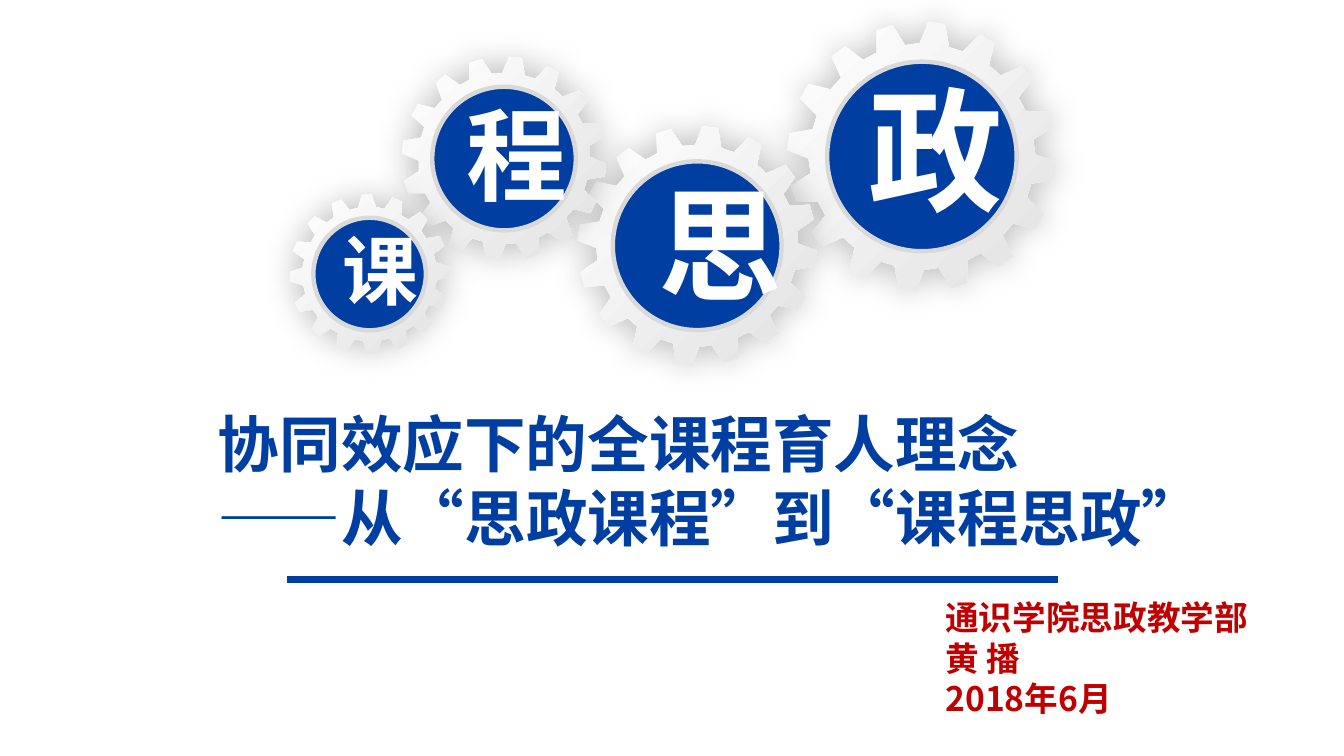
import math
from dataclasses import dataclass

import pptx
import pptx.dml.color
import pptx.enum.dml
import pptx.enum.shapes
import pptx.enum.text
import pptx.oxml
import pptx.oxml.ns
import pptx.util

PX = 9525
TEETH = 16


@dataclass(frozen=True)
class Theme:
    """Colours, fonts and type sizes of the deck."""
    blue: str = "003FA1"
    red: str = "C00000"
    white: str = "FFFFFF"
    silver: str = "E2E2E2"
    rim: str = "D9D9D9"
    edge: str = "A6A6A6"
    latin: str = "Arial"
    cjk: str = "Noto Sans CJK SC"
    title: int = 44
    author: int = 24


THEME = Theme()
ALIGN = pptx.enum.text.PP_ALIGN


def px(n):
    """Turn px into EMU."""
    return pptx.util.Emu(round(n * PX))


def rgb(value):
    """Turn a hex string into a colour."""
    return pptx.dml.color.RGBColor.from_string(value)


def place(sp, box):
    """Move a shape to a left, top, width, height box in px."""
    for name, n in zip(("left", "top", "width", "height"), box):
        setattr(sp, name, px(n))


def write(sp, lines, font, size, color, align):
    """Fill a shape with bold lines of text, one paragraph each."""
    tf = sp.text_frame
    frame = {"word_wrap": True, "vertical_anchor": pptx.enum.text.MSO_ANCHOR.TOP,
             "auto_size": pptx.enum.text.MSO_AUTO_SIZE.NONE}
    for name, value in frame.items():
        setattr(tf, name, value)
    for i, line in enumerate(lines):
        p = tf.paragraphs[0] if i == 0 else tf.add_paragraph()
        layout = {"alignment": align, "line_spacing": 1.0,
                  "space_before": pptx.util.Pt(0)}
        for name, value in layout.items():
            setattr(p, name, value)
        r = p.add_run()
        r.text = line
        for name, value in {"name": font, "size": pptx.util.Pt(size), "bold": True}.items():
            setattr(r.font, name, value)
        r.font.color.rgb = rgb(color)
        ea = pptx.oxml.parse_xml(
            f'<a:ea {pptx.oxml.ns.nsdecls("a")} typeface="{THEME.cjk}"/>')
        r.font._element.find(pptx.oxml.ns.qn("a:latin")).addnext(ea)


def add_text(shapes, box, *style):
    """Add a text box with styled lines."""
    write(shapes.add_textbox(*map(px, box)), *style)


def add_wheel(shapes, cx, cy, radius, phase):
    """Draw a toothed wheel with a silver gradient and a soft shadow."""
    corners = ((-7.5, 0.84), (-3.65, 1), (3.65, 1), (7.5, 0.84))
    points = []
    for tooth in range(TEETH):
        for turn, reach in corners:
            angle = math.radians(phase + tooth * 360 / TEETH + turn)
            points.append((cx + radius * reach * math.cos(angle),
                           cy + radius * reach * math.sin(angle)))
    fb = shapes.build_freeform(*points[0], scale=PX)
    fb.add_line_segments(points[1:], close=True)
    sp = fb.convert_to_shape()
    sp.line.fill.background()
    sp.fill.gradient()
    sp.fill.gradient_angle = 315
    for stop, color in zip(sp.fill.gradient_stops, (THEME.white, THEME.silver)):
        stop.color.rgb = rgb(color)
    sp._element.spPr.append(pptx.oxml.parse_xml(
        f'<a:effectLst {pptx.oxml.ns.nsdecls("a")}>'
        '<a:outerShdw blurRad="292100" dist="0" dir="2880000" rotWithShape="0">'
        '<a:srgbClr val="000000"><a:alpha val="25000"/></a:srgbClr>'
        '</a:outerShdw></a:effectLst>'))


def add_gear(shapes, cx, cy, radius, phase, char, size, width, height, rise):
    """Draw a wheel around a blue hub that carries one character."""
    add_wheel(shapes, cx, cy, radius, phase)
    hub = shapes.add_group_shape().shapes
    for ratio, color, weight in ((0.68, THEME.edge, 1.5), (0.705, THEME.rim, 3.15)):
        r = radius * ratio
        sp = hub.add_shape(pptx.enum.shapes.MSO_SHAPE.OVAL,
                           *map(px, (cx - r, cy - r, 2 * r, 2 * r)))
        sp.shadow.inherit = False
        sp.fill.solid()
        sp.fill.fore_color.rgb = rgb(THEME.blue)
        sp.line.color.rgb = rgb(color)
        sp.line.width = pptx.util.Pt(weight)
    add_text(hub, (cx - width / 2, cy - rise, width, height),
             [char], THEME.cjk, size, THEME.white, ALIGN.CENTER)


def add_rule(shapes, left, top, width):
    """Draw the blue rule under the title."""
    line = shapes.add_connector(pptx.enum.shapes.MSO_CONNECTOR.STRAIGHT,
                                *map(px, (left, top, left + width, top)))
    line.line.color.rgb = rgb(THEME.blue)
    line.line.width = pptx.util.Pt(4.5)
    line._element.spPr.append(pptx.oxml.parse_xml(
        f'<a:effectLst {pptx.oxml.ns.nsdecls("a")}/>'))


def build_cover(prs):
    """Build the cover slide with gears, title, rule and author lines."""
    s = prs.slides.add_slide(prs.slide_layouts[5])
    gears = (
        (878, 149, 128, 6.4, "政", 96, 120, 165, 90),
        (664, 234, 114, 6.4, "思", 88, 93, 152, 78),
        (480, 151, 97, 6.4, "程", 72, 90, 126, 67),
        (352, 261, 76, -2, "课", 54, 71, 97, 52),
    )
    for gear in gears:
        add_gear(s.shapes, *gear)
    place(s.shapes.title, (198, 382, 1082, 180))
    write(s.shapes.title, ["协同效应下的全课程育人理念", "——从“思政课程”到“课程思政”"],
          THEME.latin, THEME.title, THEME.blue, ALIGN.LEFT)
    add_rule(s.shapes, 273, 552, 735)
    add_text(s.shapes, (891, 564, 332, 126),
             ["通识学院思政教学部", "黄 播", "2018年6月"],
             THEME.cjk, THEME.author, THEME.red, ALIGN.LEFT)


def main():
    """Create the deck and save it."""
    prs = pptx.Presentation()
    prs.slide_width, prs.slide_height = px(1280), px(720)
    build_cover(prs)
    prs.save("out.pptx")


if __name__ == "__main__":
    main()
